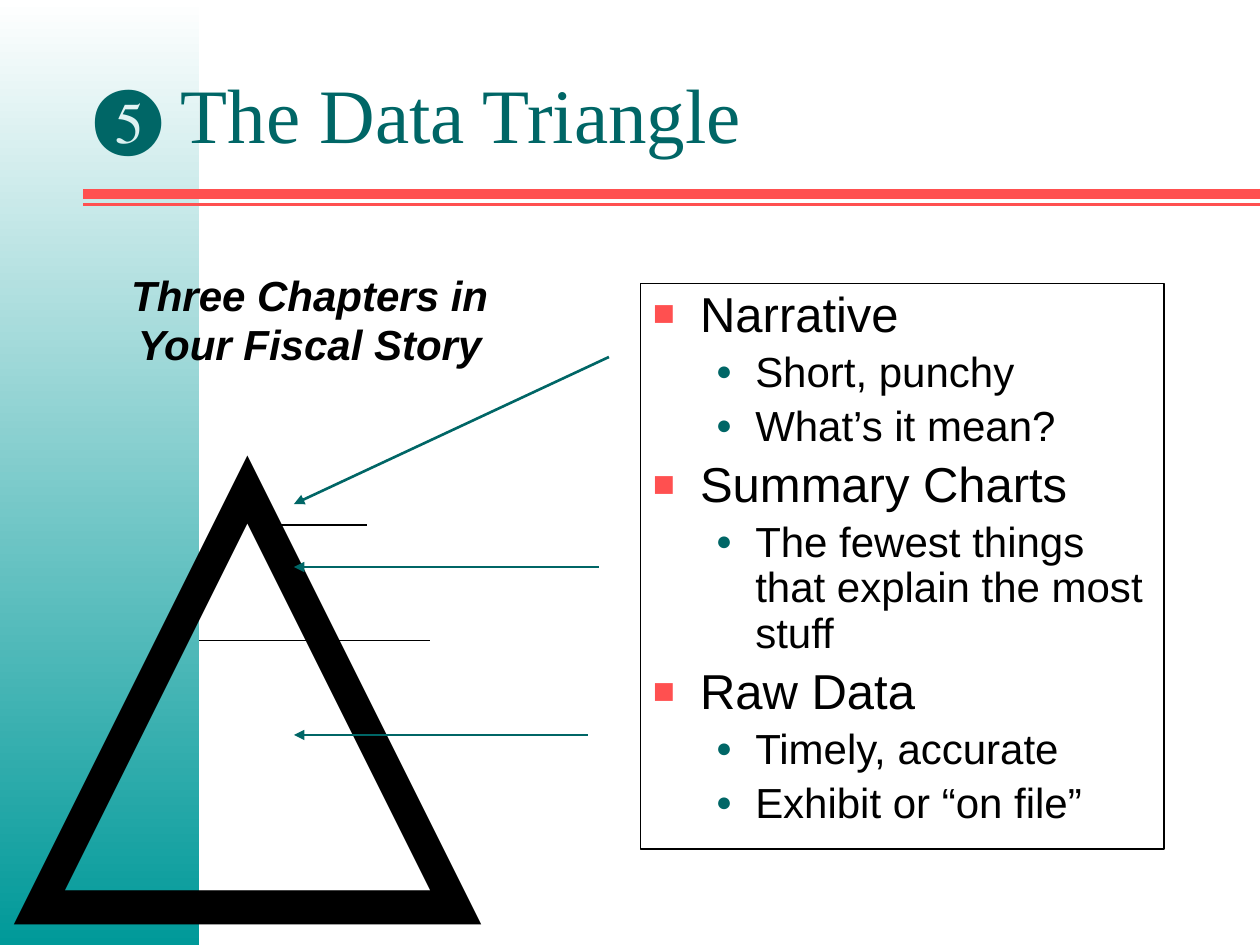
from dataclasses import dataclass
from typing import Any, NamedTuple, Optional

from lxml.etree import SubElement
from pptx import Presentation
from pptx.dml.color import RGBColor
from pptx.enum.shapes import MSO_CONNECTOR, MSO_SHAPE
from pptx.enum.text import MSO_ANCHOR, PP_ALIGN
from pptx.oxml.ns import qn
from pptx.util import Pt


@dataclass(frozen=True)
class Theme:
    white: str = "FFFFFF"
    black: str = "000000"
    teal: str = "009999"
    dark_teal: str = "006666"
    coral: str = "FF5050"
    sans: str = "Arial"
    serif: str = "Times New Roman"
    title_size: float = 44
    heading_size: float = 28
    text_size: float = 24
    triangle_size: float = 350


THEME = Theme()


class Box(NamedTuple):
    left: float
    top: float
    width: float
    height: float


class Rule(NamedTuple):
    start: tuple[float, float]
    end: tuple[float, float]
    color: str
    weight: float
    arrow: bool = False


class Bullet(NamedTuple):
    character: str
    color: str
    percent: int


class TextStyle(NamedTuple):
    size: float
    font: str = THEME.sans
    color: str = THEME.black
    emphasis: bool = False
    align: PP_ALIGN = PP_ALIGN.LEFT
    spacing: float = 1.0
    before: float = 0
    margin: float = 0
    indent: float = 0
    bullet: Optional[Bullet] = None


class Chapter(NamedTuple):
    heading: str
    points: tuple[str, ...]


TITLE = TextStyle(THEME.title_size, THEME.serif, THEME.dark_teal)
TRIANGLE = TextStyle(THEME.triangle_size, THEME.serif)
CAPTION = TextStyle(THEME.text_size, emphasis=True, align=PP_ALIGN.CENTER,
                    spacing=0.8, before=4.8, margin=27, indent=-27)
HEADING = TextStyle(THEME.heading_size, spacing=0.9, before=5.6, margin=27, indent=-27,
                    bullet=Bullet("■", THEME.coral, 75))
POINT = TextStyle(THEME.text_size, spacing=0.9, before=4.8, margin=58.5, indent=-22.5,
                  bullet=Bullet("●", THEME.dark_teal, 65))

CHAPTERS = (
    Chapter("Narrative", ("Short, punchy", "What’s it mean?")),
    Chapter("Summary Charts", ("The fewest things that explain the most stuff",)),
    Chapter("Raw Data", ("Timely, accurate", "Exhibit or “on file”")),
)

TITLE_RULES = tuple(
    Rule((47.5, y), (720, y), THEME.coral, weight) for y, weight in ((116.75, 2), (111, 6))
)
DIVIDERS = tuple(
    Rule((left, y), (right, y), THEME.black, 1)
    for left, right, y in ((150, 210, 300), (114, 246, 366))
)
ARROWS = tuple(
    Rule(start, (168, y), THEME.dark_teal, 1.5, True)
    for start, y in (((348, 204), 288), ((342, 324), 324), ((336, 420), 420))
)


def apply(target: Any, values: dict[str, Any]) -> None:
    for name, value in values.items():
        setattr(target, name, value)


def place(shape: Any, box: Box) -> None:
    apply(shape, {name: Pt(value) for name, value in box._asdict().items()})


def add_bullet(paragraph: Any, style: TextStyle) -> None:
    properties = paragraph._p.get_or_add_pPr()
    properties.set("marL", str(Pt(style.margin)))
    properties.set("indent", str(Pt(style.indent)))
    if style.bullet is None:
        SubElement(properties, qn("a:buNone"))
        return
    color = SubElement(properties, qn("a:buClr"))
    SubElement(color, qn("a:srgbClr"), val=style.bullet.color)
    SubElement(properties, qn("a:buSzPct"), val=str(style.bullet.percent * 1000))
    SubElement(properties, qn("a:buFont"), typeface=style.font)
    SubElement(properties, qn("a:buChar"), char=style.bullet.character)


def write(shape: Any, lines: list[tuple[str, TextStyle]],
          anchor: MSO_ANCHOR = MSO_ANCHOR.TOP) -> None:
    frame = shape.text_frame
    apply(frame, {
        "word_wrap": True, "vertical_anchor": anchor,
        "margin_left": Pt(7.2), "margin_right": Pt(7.2),
        "margin_top": Pt(3.6), "margin_bottom": Pt(3.6),
    })
    for index, (text, style) in enumerate(lines):
        paragraph = frame.add_paragraph() if index else frame.paragraphs[0]
        apply(paragraph, {
            "alignment": style.align, "line_spacing": style.spacing,
            "space_before": Pt(style.before),
        })
        add_bullet(paragraph, style)
        run = paragraph.add_run()
        run.text = text
        apply(run.font, {
            "name": style.font, "size": Pt(style.size),
            "bold": style.emphasis, "italic": style.emphasis,
        })
        run.font.color.rgb = RGBColor.from_string(style.color)


def add_text(slide: Any, box: Box, lines: list[tuple[str, TextStyle]]) -> Any:
    shape = slide.shapes.add_textbox(*map(Pt, box))
    write(shape, lines)
    return shape


def add_rule(slide: Any, rule: Rule) -> None:
    connector = slide.shapes.add_connector(
        MSO_CONNECTOR.STRAIGHT, *map(Pt, rule.start + rule.end))
    connector.line.width = Pt(rule.weight)
    connector.line.color.rgb = RGBColor.from_string(rule.color)
    if rule.arrow:
        SubElement(connector.line._get_or_add_ln(), qn("a:tailEnd"), type="triangle")
    SubElement(connector._element.spPr, qn("a:effectLst"))


def add_side_band(slide: Any, box: Box) -> None:
    band = slide.shapes.add_shape(MSO_SHAPE.RECTANGLE, *map(Pt, box))
    band.shadow.inherit = False
    band.line.fill.background()
    band.fill.gradient()
    band.fill.gradient_angle = 270
    for stop, position, color in zip(
            band.fill.gradient_stops, (0, 1), (THEME.white, THEME.teal)):
        stop.position = position
        stop.color.rgb = RGBColor.from_string(color)


def add_title(slide: Any, box: Box, text: str) -> None:
    title = slide.shapes.title
    place(title, box)
    write(title, [(text, TITLE)], MSO_ANCHOR.MIDDLE)
    slide.shapes.element.append(title.element)


def main() -> None:
    presentation = Presentation()
    apply(presentation, {"slide_width": Pt(720), "slide_height": Pt(540)})
    slide = presentation.slides.add_slide(presentation.slide_layouts[5])
    add_side_band(slide, Box(0, 0, 114, 540))
    for rule in TITLE_RULES:
        add_rule(slide, rule)
    add_text(slide, Box(0, 132, 366, 427), [("△", TRIANGLE)])
    add_text(slide, Box(66, 156, 222, 66),
             [(line, CAPTION) for line in ("Three Chapters in", "Your Fiscal Story")])
    lines = []
    for chapter in CHAPTERS:
        lines.append((chapter.heading, HEADING))
        lines.extend((point, POINT) for point in chapter.points)
    outline = add_text(slide, Box(366, 162, 299, 323), lines)
    outline.line.width = Pt(1)
    outline.line.color.rgb = RGBColor.from_string(THEME.black)
    add_title(slide, Box(47, 21, 644, 87), "❺ The Data Triangle")
    for rule in DIVIDERS + ARROWS:
        add_rule(slide, rule)
    presentation.save("out.pptx")


if __name__ == "__main__":
    main()
